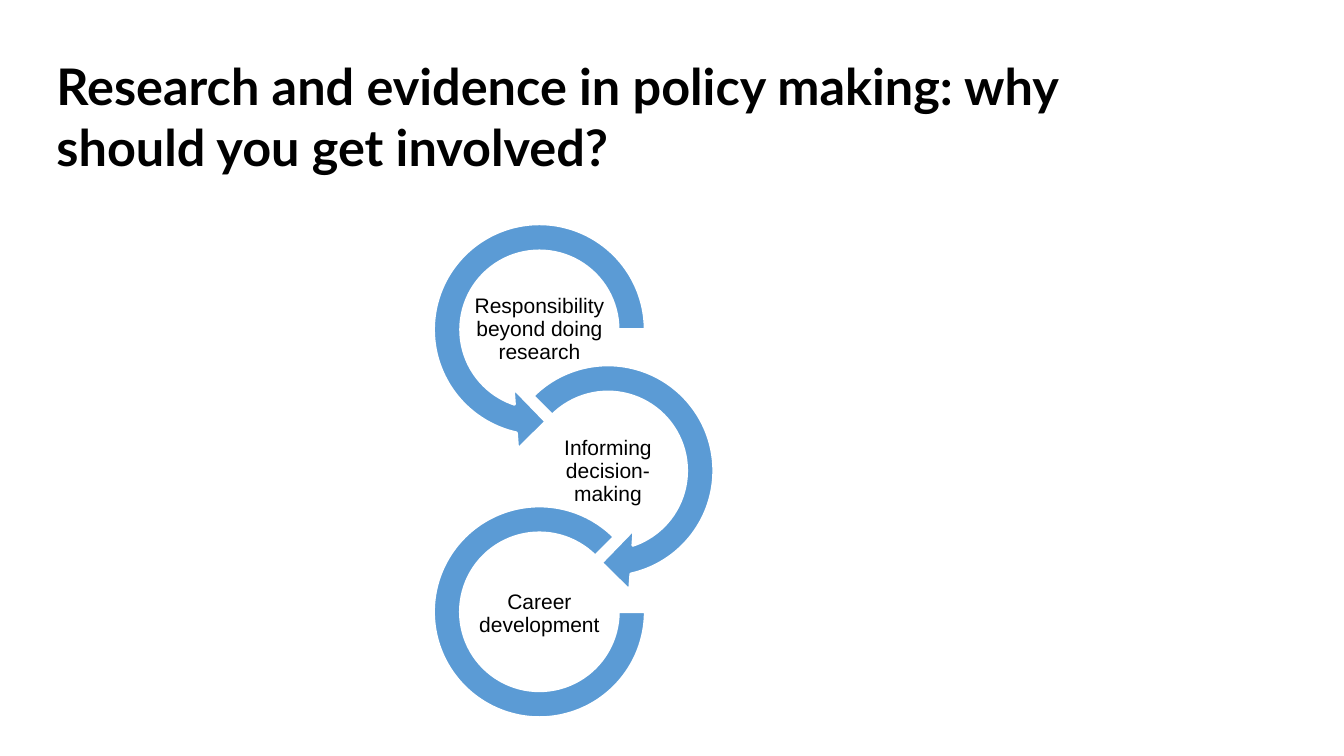
from dataclasses import dataclass

import pptx
import pptx.dml.color
import pptx.enum.shapes
import pptx.enum.text
import pptx.slide
import pptx.text.text
import pptx.util

Inches = pptx.util.Inches
Pt = pptx.util.Pt
PresetShape = pptx.enum.shapes.MSO_SHAPE
Alignment = pptx.enum.text.PP_ALIGN
Anchor = pptx.enum.text.MSO_ANCHOR

LABEL_WIDTH = 1.36
LABEL_HEIGHT = 0.68


@dataclass
class Ring:
    text: str
    preset: PresetShape
    adjustments: tuple[float, ...]
    size: float
    center_x: float
    center_y: float
    label_y: float


RINGS = [
    Ring("Responsibility beyond doing research", PresetShape.LEFT_CIRCULAR_ARROW,
         (0.11, 11.423, 63, 0, 0.125), 2.44, 5.35, 3.27, 3.27),
    Ring("Informing decision-making", PresetShape.CIRCULAR_ARROW,
         (0.11, 11.423, 45, 135, 0.125), 2.44, 6.03, 4.67, 4.68),
    Ring("Career development", PresetShape.BLOCK_ARC,
         (0, 189, 0.127), 2.1, 5.35, 6.07, 6.09),
]


def color(value: str) -> pptx.dml.color.RGBColor:
    return pptx.dml.color.RGBColor.from_string(value)


def format_runs(paragraph: pptx.text.text._Paragraph, name: str, size: float, bold: bool) -> None:
    for run in paragraph.runs:
        run.font.name = name
        run.font.size = Pt(size)
        run.font.bold = bold
        run.font.color.rgb = color("000000")


def add_title(slide: pptx.slide.Slide, text: str) -> None:
    title = slide.shapes.title
    title.left, title.top = Inches(0.46), Inches(0.5)
    title.width, title.height = Inches(11.06), Inches(2.52)
    frame = title.text_frame
    frame.text = text
    frame.word_wrap = True
    frame.auto_size = pptx.enum.text.MSO_AUTO_SIZE.NONE
    frame.vertical_anchor = Anchor.TOP
    paragraph = frame.paragraphs[0]
    paragraph.alignment = Alignment.LEFT
    format_runs(paragraph, "Lato", 36, True)


def add_ring(slide: pptx.slide.Slide, ring: Ring) -> None:
    shape = slide.shapes.add_shape(
        ring.preset,
        Inches(ring.center_x - ring.size / 2), Inches(ring.center_y - ring.size / 2),
        Inches(ring.size), Inches(ring.size))
    for index, value in enumerate(ring.adjustments):
        shape.adjustments[index] = value
    shape.shadow.inherit = False
    shape.fill.solid()
    shape.fill.fore_color.rgb = color("5B9BD5")
    shape.line.color.rgb = color("FFFFFF")
    shape.line.width = Pt(2)


def add_label(slide: pptx.slide.Slide, ring: Ring) -> None:
    label = slide.shapes.add_textbox(
        Inches(ring.center_x - LABEL_WIDTH / 2), Inches(ring.label_y - LABEL_HEIGHT / 2),
        Inches(LABEL_WIDTH), Inches(LABEL_HEIGHT))
    frame = label.text_frame
    frame.text = ring.text
    frame.word_wrap = True
    frame.vertical_anchor = Anchor.MIDDLE
    frame.margin_left = frame.margin_right = Inches(0.01)
    frame.margin_top = frame.margin_bottom = Inches(0.01)
    paragraph = frame.paragraphs[0]
    paragraph.alignment = Alignment.CENTER
    paragraph.line_spacing = 0.9
    format_runs(paragraph, "Arial", 15, False)


def main() -> None:
    presentation = pptx.Presentation()
    presentation.slide_width = Inches(13.33)
    presentation.slide_height = Inches(7.5)
    slide = presentation.slides.add_slide(presentation.slide_layouts[5])
    add_title(slide, "Research and evidence in policy making: why should you get involved?")
    for ring in RINGS:
        add_ring(slide, ring)
        add_label(slide, ring)
    presentation.save("out.pptx")


if __name__ == "__main__":
    main()
